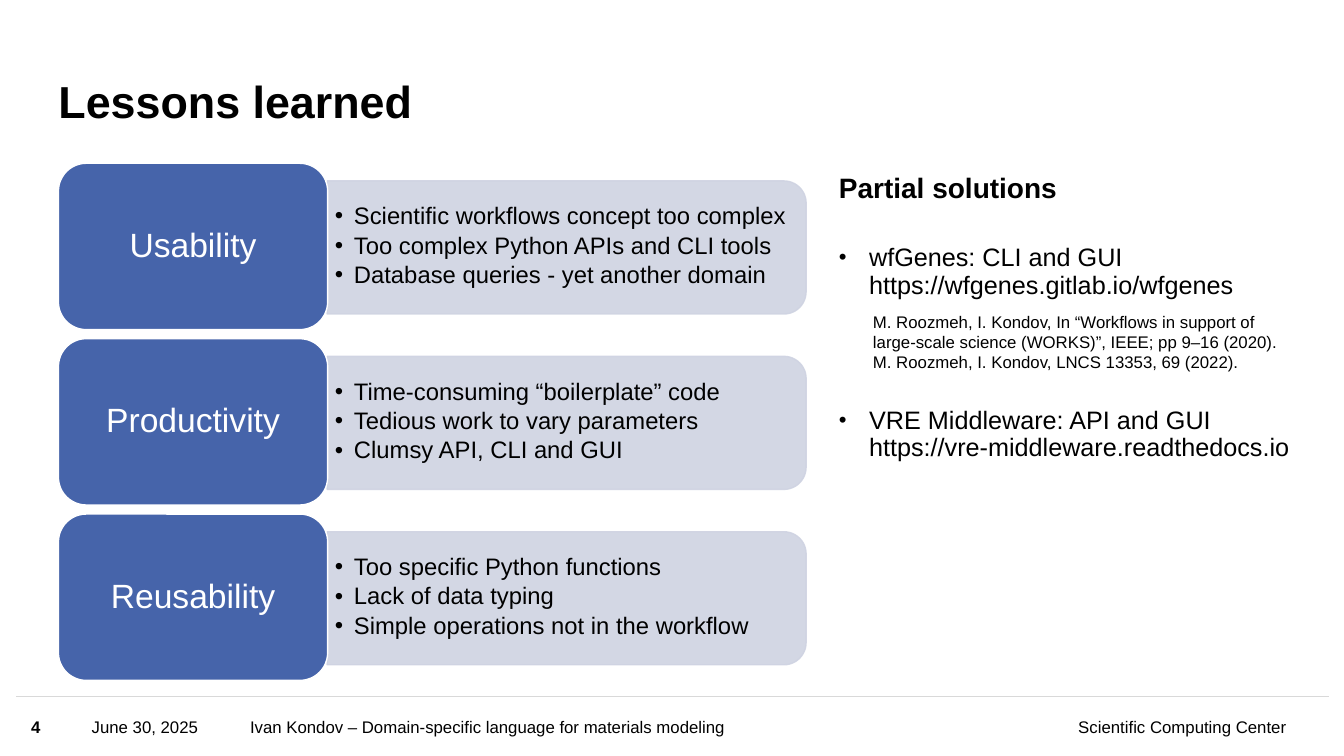
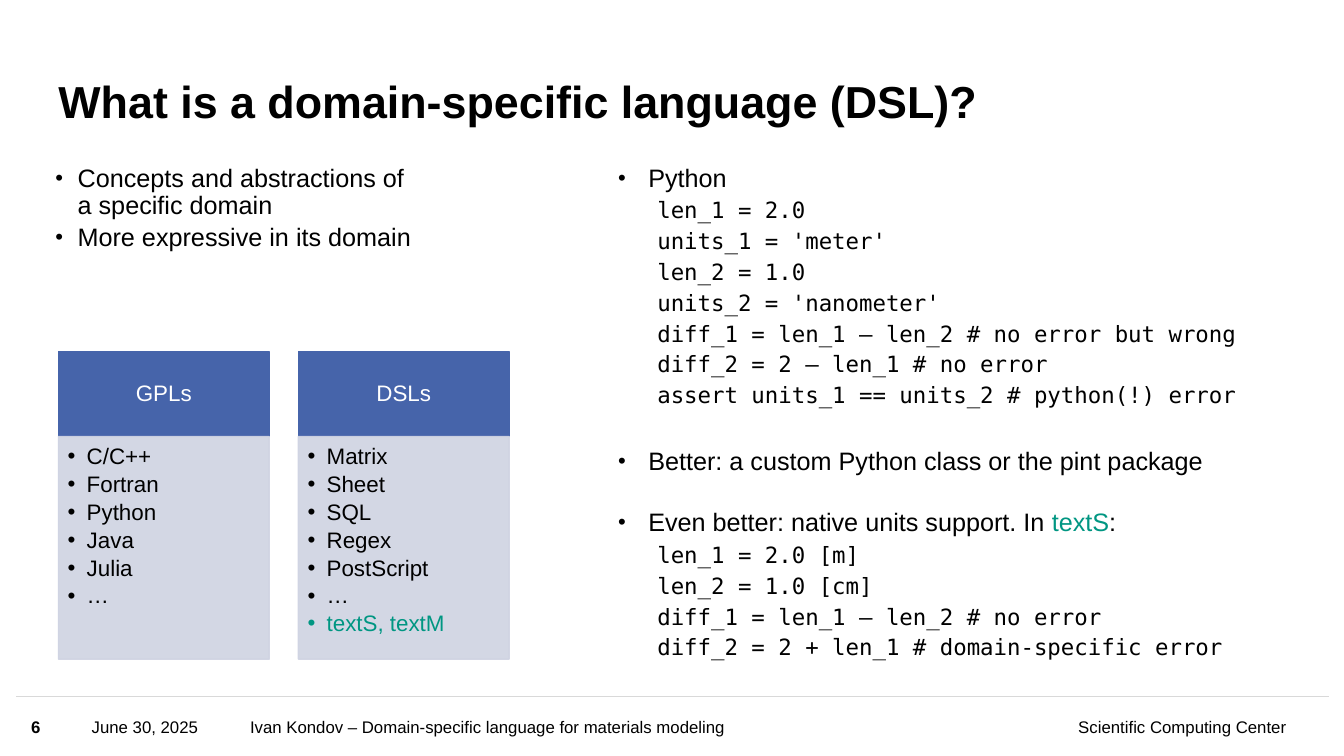
from dataclasses import dataclass, replace
from lxml.etree import SubElement
from pptx import Presentation
from pptx.dml.color import RGBColor
from pptx.enum.shapes import MSO_CONNECTOR, MSO_SHAPE
from pptx.enum.text import MSO_ANCHOR, PP_ALIGN
from pptx.oxml.ns import qn
from pptx.util import Pt

PX = 9144
HUES = {
    "ink": "000000",
    "blue": "4664AA",
    "pale": "CFD3E2",
    "teal": "009682",
    "rule": "D9D9D9",
    "white": "FFFFFF",
}


@dataclass(frozen=True)
class Style:
    size: int = 18
    face: str = "Arial"
    hue: str = "ink"
    bold: bool = False
    align: PP_ALIGN = PP_ALIGN.LEFT
    lines: float = 0.9
    above: float = 0
    below: float = 0
    left: int = 0
    hang: int = 0
    mark: int = 0


TITLE = Style(size=32, bold=True)
FOOT = Style(size=12, lines=1.0)
NOTE = FOOT
HEAD = Style(size=20, bold=True)
ITEM = Style(above=4.8, left=30, hang=30, mark=88)
POINT = replace(ITEM, above=3.6, left=22, hang=22)
CODE = Style(size=16, face="DejaVu Sans Mono", above=4.8, left=39)
ENTRY = Style(size=16, below=2.6, left=19, hang=19, mark=100)
LABEL = Style(size=24, hue="white", align=PP_ALIGN.CENTER)

THEMES = [
    ("Usability", ["Scientific workflows concept too complex",
                   "Too complex Python APIs and CLI tools",
                   "Database queries - yet another domain"]),
    ("Productivity", ["Time-consuming “boilerplate” code",
                      "Tedious work to vary parameters",
                      "Clumsy API, CLI and GUI"]),
    ("Reusability", ["Too specific Python functions",
                     "Lack of data typing",
                     "Simple operations not in the workflow"]),
]
KINDS = [
    ("GPLs", ["C/C++", "Fortran", "Python", "Java", "Julia", "…"], []),
    ("DSLs", ["Matrix", "Sheet", "SQL", "Regex", "PostScript", "…"],
     ["textS, textM"]),
]
PLAIN = [
    "len_1 = 2.0",
    "units_1 = 'meter'",
    "len_2 = 1.0",
    "units_2 = 'nanometer'",
    "diff_1 = len_1 – len_2 # no error but wrong",
    "diff_2 = 2 – len_1 # no error",
    "assert units_1 == units_2 # python(!) error",
]
NATIVE = [
    "len_1 = 2.0 [m]",
    "len_2 = 1.0 [cm]",
    "diff_1 = len_1 – len_2 # no error",
    "diff_2 = 2 + len_1 # domain-specific error",
]


def scale(box):
    return [n * PX for n in box]


def tint(name):
    return RGBColor.from_string(HUES[name])


def bullet(para, style):
    props = para._p.get_or_add_pPr()
    props.set("marL", str(style.left * PX))
    props.set("indent", str(-style.hang * PX))
    if style.mark:
        hue = SubElement(props, qn("a:buClr"))
        SubElement(hue, qn("a:srgbClr"), val=HUES[style.hue])
        SubElement(props, qn("a:buSzPct"), val=str(style.mark * 1000))
        SubElement(props, qn("a:buFont"), typeface="Arial")
        SubElement(props, qn("a:buChar"), char="•")


def write(para, words, style, first):
    para.alignment = style.align
    para.line_spacing = style.lines
    para.space_before = Pt(0 if first else style.above)
    para.space_after = Pt(style.below)
    bullet(para, style)
    runs = [(words, style.hue)] if isinstance(words, str) else words
    for part, hue in runs:
        for i, line in enumerate(part.split("\n")):
            if i:
                para.add_line_break()
            run = para.add_run()
            run.text = line
            run.font.size = Pt(style.size)
            run.font.name = style.face
            run.font.bold = style.bold
            run.font.color.rgb = tint(hue)


def fill_text(shape, rows, anchor=MSO_ANCHOR.TOP, pad=(0, 0, 0, 0)):
    frame = shape.text_frame
    frame.word_wrap = True
    frame.vertical_anchor = anchor
    (frame.margin_left, frame.margin_top,
     frame.margin_right, frame.margin_bottom) = scale(pad)
    for i, (words, style) in enumerate(rows):
        para = frame.add_paragraph() if i else frame.paragraphs[0]
        write(para, words, style, i == 0)


def add_text(slide, box, rows, **opts):
    fill_text(slide.shapes.add_textbox(*scale(box)), rows, **opts)


def add_block(slide, kind, box, fill, edge, clear=False):
    shape = slide.shapes.add_shape(kind, *scale(box))
    shape.shadow.inherit = False
    shape.fill.solid()
    shape.fill.fore_color.rgb = tint(fill)
    shape.line.color.rgb = tint(edge)
    shape.line.width = Pt(1)
    if clear:
        for hue in shape._element.spPr.iter(qn("a:srgbClr")):
            SubElement(hue, qn("a:alpha"), val="90000")
    return shape


def add_rule(slide):
    rule = slide.shapes.add_connector(
        MSO_CONNECTOR.STRAIGHT, *scale((16, 691, 1318, 691)))
    rule.line.color.rgb = tint("rule")
    rule.line.width = Pt(1)
    SubElement(rule._element.spPr, qn("a:effectLst"))


def add_page(deck, title, number):
    slide = deck.slides.add_slide(deck.slide_layouts[6])
    add_rule(slide)
    right = replace(FOOT, align=PP_ALIGN.RIGHT)
    feet = [
        (31, 48, number, replace(FOOT, bold=True)),
        (91, 150, "June 30, 2025", FOOT),
        (248, 537,
         "Ivan Kondov – Domain-specific language for materials modeling",
         FOOT),
        (803, 473, "Scientific Computing Center", right),
    ]
    for left, width, words, style in feet:
        add_text(slide, (left, 692, width, 58), [(words, style)],
                 anchor=MSO_ANCHOR.MIDDLE)
    add_text(slide, (58, 43, 1002, 84), [(title, TITLE)],
             anchor=MSO_ANCHOR.BOTTOM)
    return slide


def add_theme(slide, drop, name, points):
    bar = add_block(slide, MSO_SHAPE.ROUND_2_SAME_RECTANGLE,
                    (496, 8 + drop, 132, 475), "pale", "pale", clear=True)
    bar.rotation = 90
    entry = replace(ENTRY, size=17)
    add_text(slide, (325, 185 + drop, 468, 119),
             [(point, entry) for point in points],
             anchor=MSO_ANCHOR.MIDDLE, pad=(7, 4, 7, 4))
    label = add_block(slide, MSO_SHAPE.ROUNDED_RECTANGLE,
                      (58, 162 + drop, 267, 165), "blue", "white")
    fill_text(label, [(name, LABEL)], anchor=MSO_ANCHOR.MIDDLE)


def add_kind(slide, left, name, items, ours):
    head = add_block(slide, MSO_SHAPE.RECTANGLE,
                     (left, 349, 209, 84), "blue", "blue")
    fill_text(head, [(name, replace(LABEL, size=16))],
              anchor=MSO_ANCHOR.MIDDLE, pad=(12, 7, 12, 7))
    body = add_block(slide, MSO_SHAPE.RECTANGLE,
                     (left, 433, 209, 221), "pale", "pale", clear=True)
    rows = [(item, ENTRY) for item in items]
    rows += [(item, replace(ENTRY, hue="teal")) for item in ours]
    fill_text(body, rows, pad=(9, 9, 12, 14))


def add_lessons(deck):
    slide = add_page(deck, "Lessons learned", "4")
    for i, (name, points) in enumerate(THEMES):
        add_theme(slide, 174 * i, name, points)
    add_text(slide, (832, 173, 465, 502), [
        ("Partial solutions", HEAD),
        ("wfGenes: CLI and GUI\nhttps://wfgenes.gitlab.io/wfgenes",
         replace(ITEM, above=28.9)),
        ("VRE Middleware: API and GUI\nhttps://vre-middleware.readthedocs.io",
         replace(ITEM, above=77.1)),
    ])
    add_text(slide, (856, 304, 441, 71), [
        ("M. Roozmeh, I. Kondov, In “Workflows in support of large-scale "
         "science (WORKS)”, IEEE; pp 9–16 (2020).", NOTE),
        ("M. Roozmeh, I. Kondov, LNCS 13353, 69 (2022).", NOTE),
    ], pad=(10, 5, 10, 5))


def add_basics(deck):
    slide = add_page(deck, "What is a domain-specific language (DSL)?", "6")
    add_text(slide, (55, 164, 531, 136), [
        ("Concepts and abstractions of\na specific domain", POINT),
        ("More expressive in its domain", POINT),
    ])
    for i, (name, items, ours) in enumerate(KINDS):
        add_kind(slide, 58 + 238 * i, name, items, ours)
    native = [("Even better: native units support. In ", "ink"),
              ("textS", "teal"), (":", "ink")]
    rows = [("Python", ITEM)]
    rows += [(line, CODE) for line in PLAIN]
    rows += [("Better: a custom Python class or the pint package",
              replace(ITEM, above=28.9)),
             (native, replace(ITEM, above=24.1))]
    rows += [(line, CODE) for line in NATIVE]
    add_text(slide, (613, 164, 657, 528), rows)


def main():
    deck = Presentation()
    deck.slide_width, deck.slide_height = scale((1333, 750))
    add_lessons(deck)
    add_basics(deck)
    deck.save("out.pptx")


if __name__ == "__main__":
    main()
